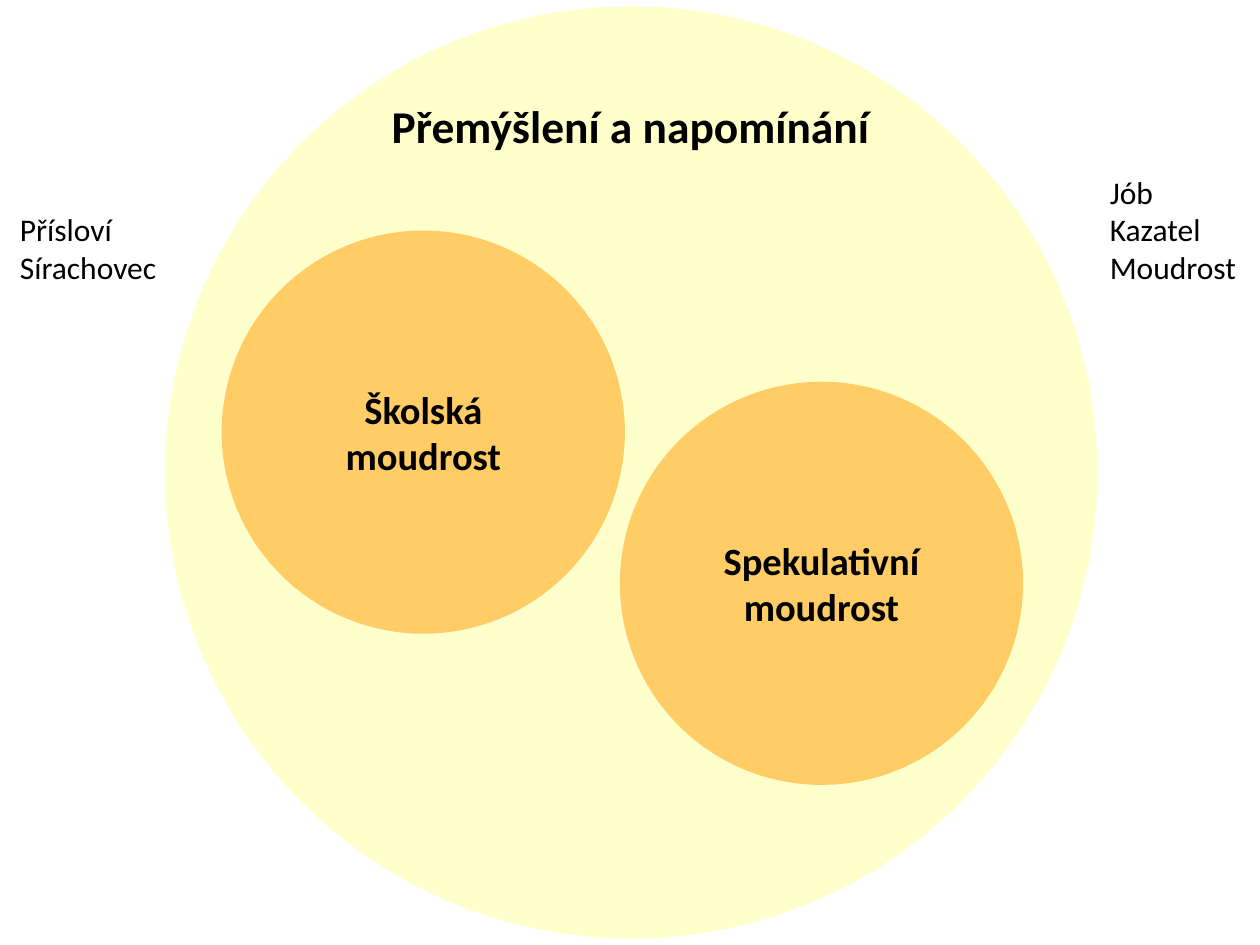
from pptx import Presentation
from pptx.dml.color import RGBColor
from pptx.enum.shapes import MSO_SHAPE
from pptx.enum.text import MSO_ANCHOR, MSO_AUTO_SIZE, PP_ALIGN
from pptx.util import Inches, Pt

OVAL = MSO_SHAPE.OVAL
MIDDLE = MSO_ANCHOR.MIDDLE
GROW = MSO_AUTO_SIZE.SHAPE_TO_FIT_TEXT
LEFT, CENTER = PP_ALIGN.LEFT, PP_ALIGN.CENTER

FONT = "Calibri"
COLORS = {"outer": "FFFFCC", "inner": "FFCC66", "text": "000000"}


def write_text(frame, lines, size=18, bold=False, align=LEFT):
    for index, line in enumerate(lines):
        paragraph = frame.paragraphs[0] if index == 0 else frame.add_paragraph()
        paragraph.alignment = align
        run = paragraph.add_run()
        run.text = line
        run.font.name = FONT
        run.font.size = Pt(size)
        run.font.bold = bold
        run.font.color.rgb = RGBColor.from_string(COLORS["text"])


def add_circle(slide, left, top, diameter, color, label=None):
    shape = slide.shapes.add_shape(
        OVAL, Inches(left), Inches(top), Inches(diameter), Inches(diameter))
    shape.shadow.inherit = False
    shape.fill.solid()
    shape.fill.fore_color.rgb = RGBColor.from_string(COLORS[color])
    shape.line.fill.background()
    if label:
        frame = shape.text_frame
        frame.word_wrap = True
        frame.vertical_anchor = MIDDLE
        write_text(frame, [label], size=22, bold=True, align=CENTER)


def add_label(slide, box, lines, **text_format):
    shape = slide.shapes.add_textbox(*map(Inches, box))
    frame = shape.text_frame
    frame.word_wrap = False
    frame.auto_size = GROW
    write_text(frame, lines, **text_format)


def add_wisdom_circles(slide, left, top, diameter):
    add_circle(slide, left, top, diameter, "outer")
    add_circle(slide, left + 0.45, top + 1.78, 3.2, "inner", "Školská moudrost")
    add_circle(slide, left + 3.61, top + 2.98, 3.2, "inner", "Spekulativní moudrost")
    add_label(slide, (left + 1.7, top + 0.68, 4.04, 0.54),
              ["Přemýšlení a napomínání"], size=26, bold=True)


def main():
    presentation = Presentation()
    presentation.slide_width = Inches(10)
    presentation.slide_height = Inches(7.5)
    slide = presentation.slides.add_slide(presentation.slide_layouts[6])
    add_wisdom_circles(slide, 1.31, 0.05, 7.4)
    add_label(slide, (0.06, 1.62, 1.3, 0.71), ["Přísloví", "Sírachovec"])
    add_label(slide, (8.71, 1.32, 1.21, 1.01), ["Jób", "Kazatel", "Moudrost"])
    presentation.save("out.pptx")


if __name__ == "__main__":
    main()
